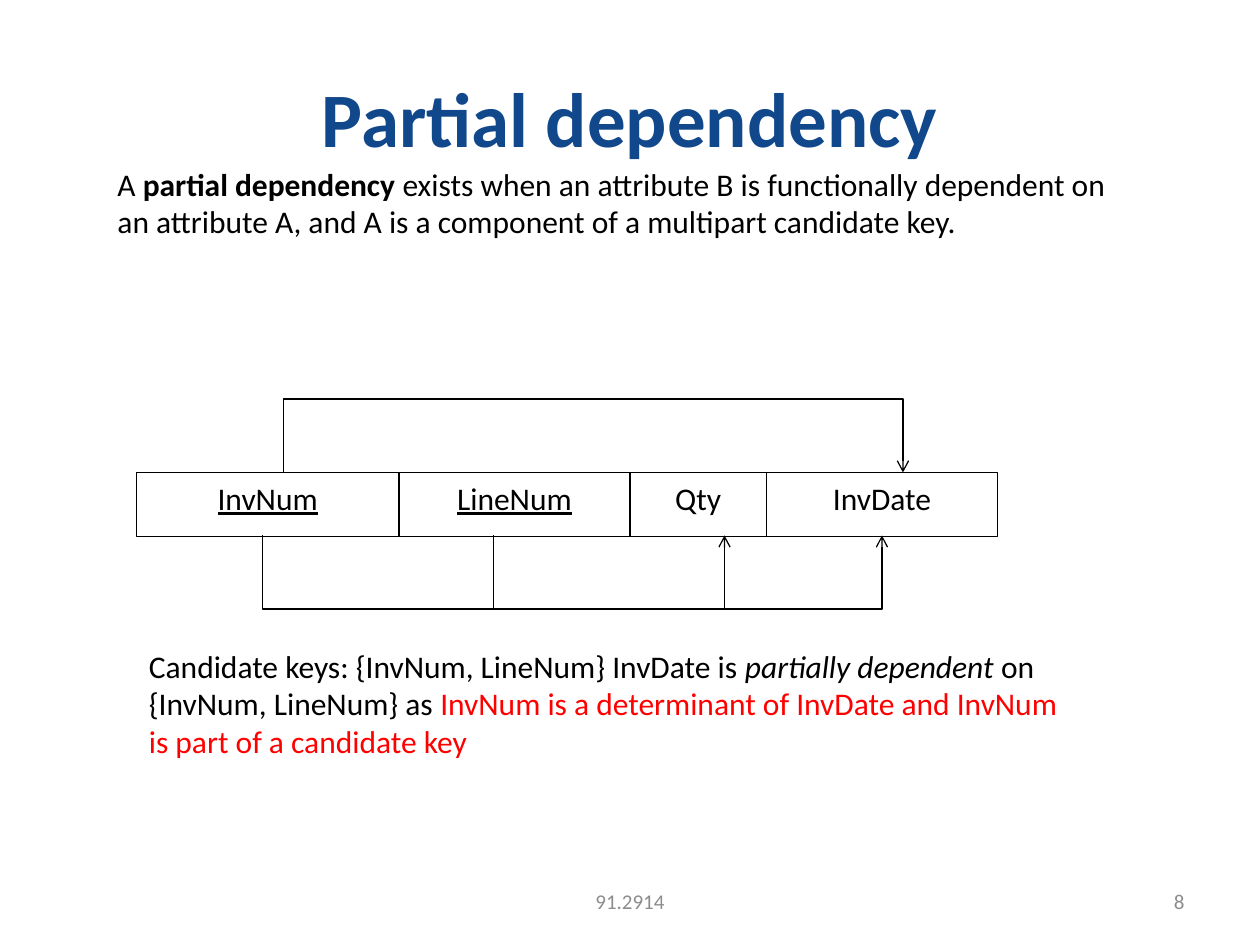
import pptx
import pptx.dml.color
import pptx.enum.shapes
import pptx.enum.text
import pptx.oxml
import pptx.oxml.ns
import pptx.util
from dataclasses import dataclass
from itertools import accumulate
from typing import Optional

ALIGN = pptx.enum.text.PP_ALIGN
ANCHOR = pptx.enum.text.MSO_ANCHOR
CELL = pptx.util.Inches(1) // 12  # the slide is a grid of 120 columns and 90 rows
BLACK, BLUE, GREY, RED = "000000", "11478B", "8C8C8C", "FF0000"
TABLE_LEFT, TABLE_TOP, TABLE_BOTTOM = 13, 45, 51


@dataclass(frozen=True)
class Span:
    text: str
    color: str = BLACK
    size: int = 18
    bold: bool = False
    italic: bool = False
    underline: bool = False


@dataclass(frozen=True)
class Attribute:
    name: str
    columns: int
    is_key: bool = False


@dataclass(frozen=True)
class Dependency:
    source: int
    target: int
    edge: int
    turn: int


ATTRIBUTES = [
    Attribute("InvNum", 25, True),
    Attribute("LineNum", 22, True),
    Attribute("Qty", 13),
    Attribute("InvDate", 22),
]
DEPENDENCIES = [
    Dependency(47, 69, TABLE_BOTTOM, 58),
    Dependency(25, 84, TABLE_BOTTOM, 58),
    Dependency(27, 86, TABLE_TOP, 38),
]


def grid(cells: float) -> int:
    return round(cells * CELL)


def rgb(color: str) -> pptx.dml.color.RGBColor:
    return pptx.dml.color.RGBColor.from_string(color)


def write(shape, spans: list[Span], align=ALIGN.LEFT, anchor=ANCHOR.TOP) -> None:
    frame = shape.text_frame
    frame.word_wrap = True
    frame.auto_size = pptx.enum.text.MSO_AUTO_SIZE.NONE
    frame.vertical_anchor = anchor
    para = frame.paragraphs[0]
    para.alignment = align
    for span in spans:
        run = para.add_run()
        run.text = span.text
        font = run.font
        font.name, font.size = "Calibri", pptx.util.Pt(span.size)
        font.bold, font.italic, font.underline = span.bold, span.italic, span.underline
        font.color.rgb = rgb(span.color)


def add_text(page, left: float, top: float, width: float, height: float,
             spans: list[Span], align=ALIGN.LEFT, anchor=ANCHOR.TOP) -> None:
    box = page.shapes.add_textbox(*map(grid, (left, top, width, height)))
    write(box, spans, align, anchor)


def outline(shape) -> None:
    shape.shadow.inherit = False
    shape.fill.background()
    shape.line.color.rgb = rgb(BLACK)
    shape.line.width = pptx.util.Pt(0.75)


def add_attribute(page, left: int, attribute: Attribute) -> None:
    box = page.shapes.add_shape(
        pptx.enum.shapes.MSO_SHAPE.RECTANGLE, grid(left), grid(TABLE_TOP),
        grid(attribute.columns), grid(TABLE_BOTTOM - TABLE_TOP + 0.1))
    outline(box)
    write(box, [Span(attribute.name, underline=attribute.is_key)], ALIGN.CENTER)


def add_dependency(page, link: Dependency) -> None:
    builder = page.shapes.build_freeform(grid(link.source), grid(link.edge))
    corners = [(link.source, link.turn), (link.target, link.turn), (link.target, link.edge)]
    builder.add_line_segments([(grid(x), grid(y)) for x, y in corners], close=False)
    bracket = builder.convert_to_shape()
    outline(bracket)
    line = bracket.element.spPr.find(pptx.oxml.ns.qn("a:ln"))
    line.append(pptx.oxml.parse_xml(
        f'<a:tailEnd {pptx.oxml.ns.nsdecls("a")} type="arrow"/>'))


def main() -> None:
    deck = pptx.Presentation()
    deck.slide_width, deck.slide_height = grid(120), grid(90)
    page = deck.slides.add_slide(deck.slide_layouts[5])

    # Title
    title = page.shapes.title
    title.left, title.top, title.width, title.height = map(grid, (6, 3.6, 108, 15))
    write(title, [Span("Partial dependency", BLUE, 44, bold=True)], ALIGN.CENTER, ANCHOR.MIDDLE)

    # Footer and page number
    add_text(page, 41, 83.4, 38, 4.8, [Span("91.2914", GREY, 12)], ALIGN.CENTER, ANCHOR.MIDDLE)
    add_text(page, 86, 83.4, 28, 4.8, [Span("8", GREY, 12)], ALIGN.RIGHT, ANCHOR.MIDDLE)

    # Definition
    add_text(page, 10, 15.1, 99, 15.6, [
        Span("A "),
        Span("partial dependency", bold=True),
        Span(" exists when an attribute B is functionally dependent on an attribute A, "
             "and A is a component of a multipart candidate key."),
    ])

    # Relation and its dependencies
    lefts = accumulate((item.columns for item in ATTRIBUTES), initial=TABLE_LEFT)
    for left, attribute in zip(lefts, ATTRIBUTES):
        add_attribute(page, left, attribute)
    for link in DEPENDENCIES:
        add_dependency(page, link)

    # Explanation
    add_text(page, TABLE_LEFT, 61, 91, 20.4, [
        Span("Candidate keys: {InvNum, LineNum} InvDate is "),
        Span("partially dependent", italic=True),
        Span(" on {InvNum, LineNum} as "),
        Span("InvNum is a determinant of InvDate and InvNum is part of a candidate key", RED),
    ])

    deck.save("out.pptx")


if __name__ == "__main__":
    main()
